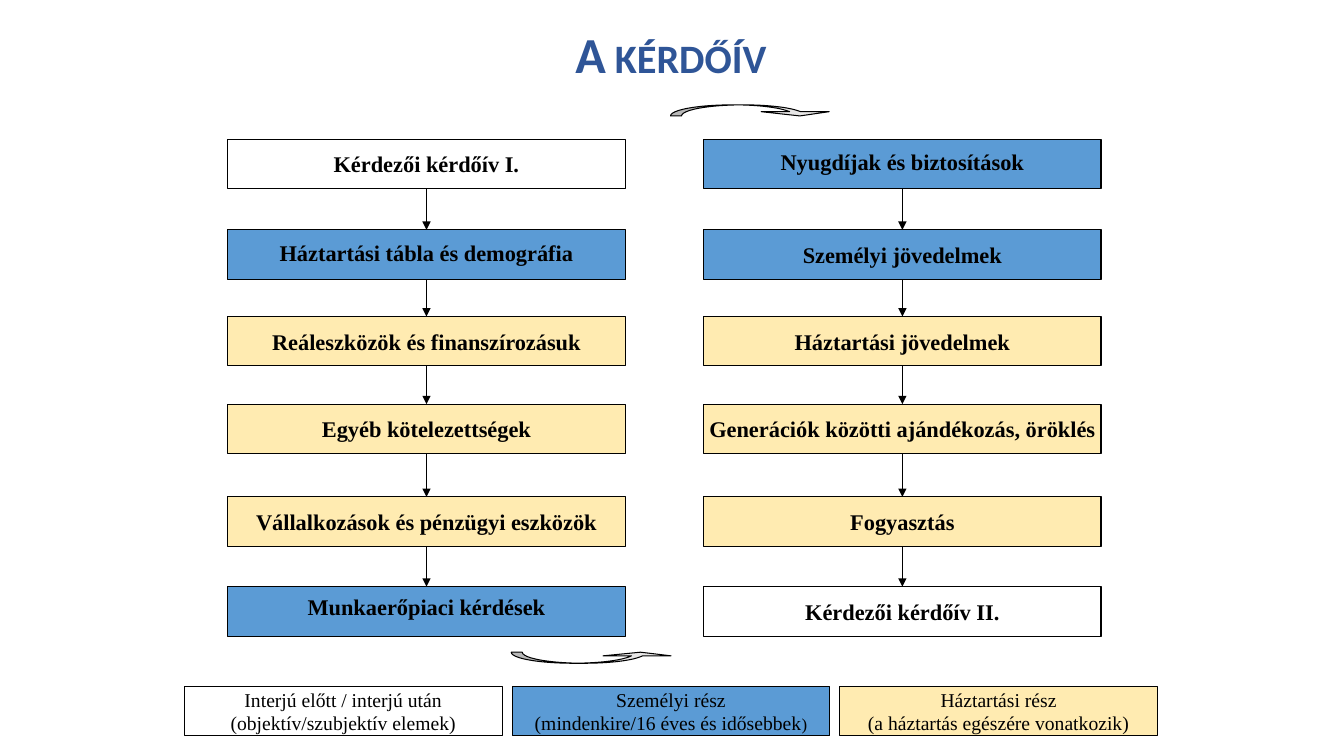
from dataclasses import dataclass
from itertools import pairwise

from lxml import etree
from pptx import Presentation
from pptx.dml.color import RGBColor
from pptx.enum.shapes import MSO_CONNECTOR, MSO_SHAPE
from pptx.enum.text import MSO_ANCHOR, PP_ALIGN
from pptx.oxml.ns import qn
from pptx.util import Inches, Pt

PROCESS = MSO_SHAPE.FLOWCHART_PROCESS
CURVED_UP = MSO_SHAPE.CURVED_UP_ARROW
CURVED_DOWN = MSO_SHAPE.CURVED_DOWN_ARROW
STRAIGHT = MSO_CONNECTOR.STRAIGHT
CENTER = PP_ALIGN.CENTER
MIDDLE = MSO_ANCHOR.MIDDLE
TOP_SIDE, BOTTOM_SIDE = 0, 2


@dataclass(frozen=True)
class Theme:
    title_font: str = "Calibri"
    body_font: str = "Times New Roman"
    title_color: str = "2F5597"
    ink: str = "000000"
    personal: str = "5B9BD5"
    household: str = "FFD966"
    household_alpha: int = 51
    turn_arrow: str = "E7E6E6"
    title_size: int = 36
    step_size: int = 16
    legend_size: int = 14
    legend_small: int = 12
    line_width: float = 0.75


THEME = Theme()

# Grid in inches: two columns of six steps, one legend row
SLIDE_WIDTH, SLIDE_HEIGHT = 13.33, 7.5
COLUMN_LEFTS = (2.26, 6.98)
ROW_TOPS = (1.38, 2.28, 3.14, 4.01, 4.93, 5.82)
STEP_WIDTH, BOX_HEIGHT = 3.94, 0.49
LEGEND_LEFT, LEGEND_TOP, LEGEND_PITCH, LEGEND_WIDTH = 1.83, 6.81, 3.25, 3.15
INSET = 0.04

# Each step: text, fill, upward shift of the text
STEPS = (
    (
        ("Kérdezői kérdőív I.", None, 0),
        ("Háztartási tábla és demográfia", THEME.personal, 0.02),
        ("Reáleszközök és finanszírozásuk", THEME.household, 0),
        ("Egyéb kötelezettségek", THEME.household, 0),
        ("Vállalkozások és pénzügyi eszközök", THEME.household, 0),
        ("Munkaerőpiaci kérdések", THEME.personal, 0.05),
    ),
    (
        ("Nyugdíjak és biztosítások", THEME.personal, 0.02),
        ("Személyi jövedelmek", THEME.personal, 0),
        ("Háztartási jövedelmek", THEME.household, 0),
        ("Generációk közötti ajándékozás, öröklés", THEME.household, 0),
        ("Fogyasztás", THEME.household, 0),
        ("Kérdezői kérdőív II.", None, 0),
    ),
)

# Each legend entry: fill, then lines made of (text, size) runs
LEGEND = (
    (None, (
        (("Interjú előtt / interjú után", THEME.legend_size),),
        (("(objektív/szubjektív elemek)", THEME.legend_size),),
    )),
    (THEME.personal, (
        (("Személyi rész", THEME.legend_size),),
        (("(mindenkire/16 éves és idősebbek", THEME.legend_size),
         (")", THEME.legend_small)),
    )),
    (THEME.household, (
        (("Háztartási rész", THEME.legend_size),),
        (("(a háztartás egészére vonatkozik)", THEME.legend_size),),
    )),
)


def add_run(paragraph, text, size, font_name, color, bold=False):
    run = paragraph.add_run()
    run.text = text
    run.font.size = Pt(size)
    run.font.name = font_name
    run.font.bold = bold
    run.font.color.rgb = RGBColor.from_string(color)
    return run


def add_outlined(slide, kind, left, top, width, height, fill):
    shape = slide.shapes.add_shape(
        kind, Inches(left), Inches(top), Inches(width), Inches(height))
    shape.shadow.inherit = False
    shape.line.color.rgb = RGBColor.from_string(THEME.ink)
    shape.line.width = Pt(THEME.line_width)
    if fill is None:
        shape.fill.background()
    else:
        shape.fill.solid()
        shape.fill.fore_color.rgb = RGBColor.from_string(fill)
    if fill == THEME.household:
        color = shape.fill._xPr.find(qn("a:solidFill"))[0]
        alpha = etree.SubElement(color, qn("a:alpha"))
        alpha.set("val", str(THEME.household_alpha * 1000))
    return shape


def add_box(slide, left, top, width, fill, lines, bold=False, wrap=True, lift=0):
    box = add_outlined(slide, PROCESS, left, top, width, BOX_HEIGHT, fill)
    frame = box.text_frame
    frame.word_wrap = wrap
    frame.vertical_anchor = MIDDLE
    frame.margin_left = frame.margin_right = frame.margin_top = Inches(INSET)
    frame.margin_bottom = Inches(INSET + 2 * lift)
    for index, runs in enumerate(lines):
        paragraph = frame.add_paragraph() if index else frame.paragraphs[0]
        paragraph.alignment = CENTER
        for text, size in runs:
            add_run(paragraph, text, size, THEME.body_font, THEME.ink, bold)
    return box


def add_arrow(slide, upper, lower):
    arrow = slide.shapes.add_connector(STRAIGHT, 0, 0, 0, 0)
    arrow.begin_connect(upper, BOTTOM_SIDE)
    arrow.end_connect(lower, TOP_SIDE)
    arrow.line.color.rgb = RGBColor.from_string(THEME.ink)
    arrow.line.width = Pt(THEME.line_width)
    line = arrow.line._get_or_add_ln()
    etree.SubElement(line, qn("a:tailEnd")).set("type", "triangle")
    etree.SubElement(arrow._element.spPr, qn("a:effectLst"))


def add_column(slide, left, steps):
    boxes = [
        add_box(slide, left, top, STEP_WIDTH, fill,
                [[(text, THEME.step_size)]], bold=True, lift=lift)
        for top, (text, fill, lift) in zip(ROW_TOPS, steps)
    ]
    for upper, lower in pairwise(boxes):
        add_arrow(slide, upper, lower)


def add_turn(slide, kind, left, top, adjustments):
    turn = add_outlined(slide, kind, left, top, 1.62, 0.11, THEME.turn_arrow)
    for index, value in enumerate(adjustments):
        turn.adjustments[index] = value


def add_title(slide, text):
    box = slide.shapes.add_textbox(
        Inches(3.82), Inches(0.18), Inches(5.67), Inches(0.71))
    box.text_frame.word_wrap = True
    paragraph = box.text_frame.paragraphs[0]
    paragraph.alignment = CENTER
    run = add_run(paragraph, text, THEME.title_size, THEME.title_font,
                  THEME.title_color, bold=True)
    run.font._element.set("cap", "small")


def main():
    presentation = Presentation()
    presentation.slide_width = Inches(SLIDE_WIDTH)
    presentation.slide_height = Inches(SLIDE_HEIGHT)
    slide = presentation.slides.add_slide(presentation.slide_layouts[6])

    add_title(slide, "A kérdőív")

    # Questionnaire flow
    for left, steps in zip(COLUMN_LEFTS, STEPS):
        add_column(slide, left, steps)

    # Turns from the first column to the second
    add_turn(slide, CURVED_UP, 5.07, 6.47, (3.07, 6.14, 0.33))
    add_turn(slide, CURVED_DOWN, 6.65, 1.04, (3.07, 6.14, 0.38))

    # Legend
    for index, (fill, lines) in enumerate(LEGEND):
        add_box(slide, LEGEND_LEFT + index * LEGEND_PITCH, LEGEND_TOP,
                LEGEND_WIDTH, fill, lines, wrap=False)

    presentation.save("out.pptx")


if __name__ == "__main__":
    main()
